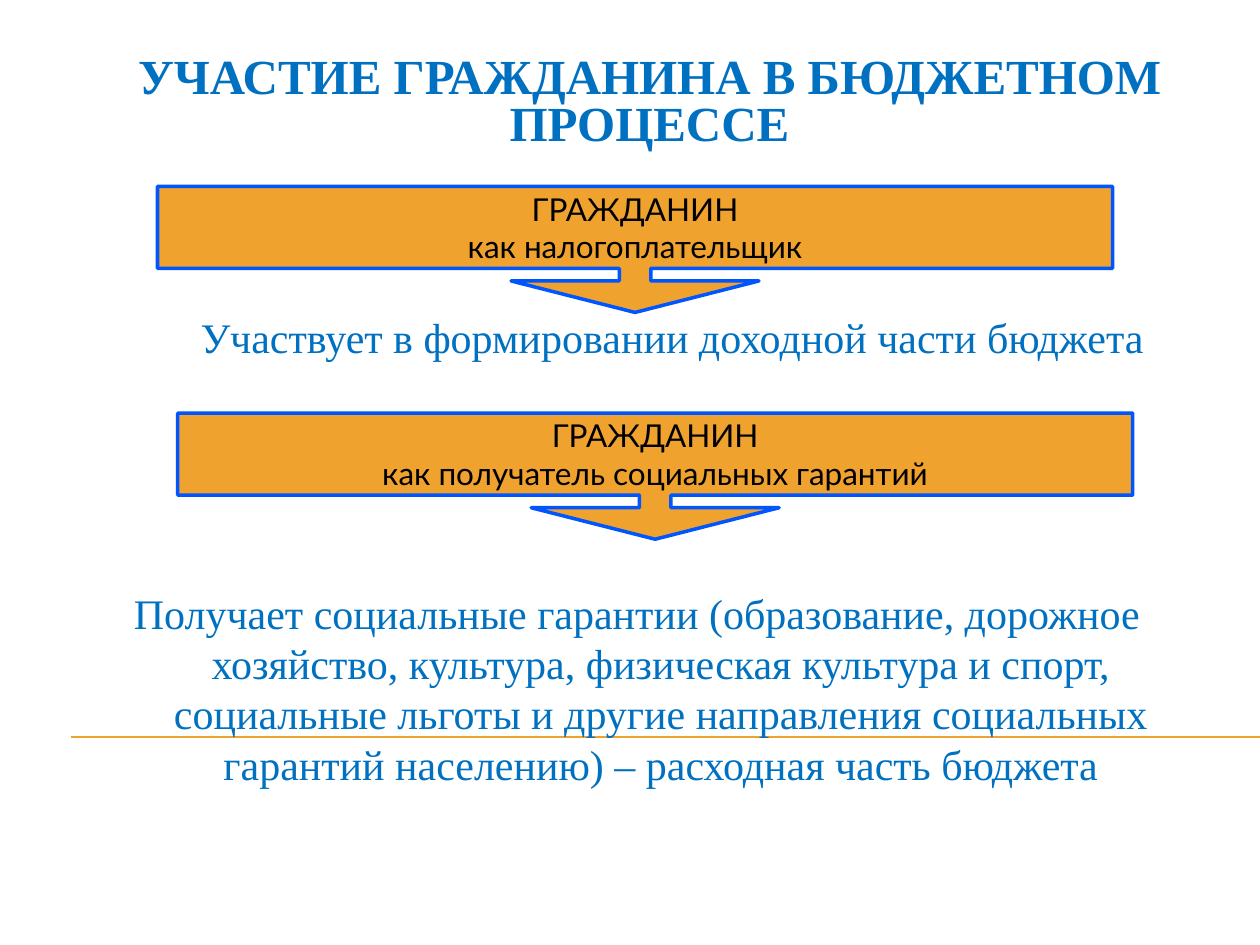
from pptx import Presentation
from pptx.dml.color import RGBColor
from pptx.enum.shapes import MSO_CONNECTOR as Connector, MSO_SHAPE as Shape
from pptx.enum.text import MSO_ANCHOR as Anchor, PP_ALIGN as Align
from pptx.oxml.ns import qn
from pptx.util import Inches, Pt
from lxml.etree import SubElement

COLORS = {"orange": "F0A22E", "outline": "0055FE", "blue": "0070C0", "black": "000000"}


def rgb(name):
    return RGBColor.from_string(COLORS[name])


def write(frame, text, size=24, font="Times New Roman", color="blue", bold=False,
          anchor=Anchor.TOP, spacing=None, hanging=0):
    frame.word_wrap = True
    frame.vertical_anchor = anchor
    for index, line in enumerate(text.split("\n")):
        paragraph = frame.add_paragraph() if index else frame.paragraphs[0]
        paragraph.alignment = Align.CENTER
        if spacing:
            paragraph.line_spacing = spacing
        if hanging:
            properties = paragraph._p.get_or_add_pPr()
            properties.set("marL", str(Inches(hanging)))
            properties.set("indent", str(-Inches(hanging)))
        run = paragraph.add_run()
        run.text = line
        run.font.name = font
        run.font.size = Pt(size)
        run.font.bold = bold
        run.font.color.rgb = rgb(color)


class BudgetSlide:
    """Draws the elements of the slide in one shared style."""

    def __init__(self, slide):
        self.shapes = slide.shapes

    def rule(self, left, right, y):
        rule = self.shapes.add_connector(
            Connector.STRAIGHT, Inches(left), Inches(y), Inches(right), Inches(y))
        rule.line.color.rgb = rgb("orange")
        rule.line.width = Pt(0.75)
        SubElement(rule._element.spPr, qn("a:effectLst"))

    def text(self, left, top, width, height, content, **style):
        box = self.shapes.add_textbox(Inches(left), Inches(top), Inches(width), Inches(height))
        write(box.text_frame, content, **style)

    def callout(self, left, top, content):
        callout = self.shapes.add_shape(
            Shape.DOWN_ARROW_CALLOUT, Inches(left), Inches(top), Inches(7.58), Inches(1))
        for index, value in enumerate((0.25, 0.984, 0.25, 0.65)):
            callout.adjustments[index] = value
        callout.shadow.inherit = False
        callout.fill.solid()
        callout.fill.fore_color.rgb = rgb("orange")
        callout.line.color.rgb = rgb("outline")
        callout.line.width = Pt(2)
        write(callout.text_frame, content, size=18, font="Lato", color="black",
              anchor=Anchor.MIDDLE)


def main():
    deck = Presentation()
    deck.slide_width, deck.slide_height = Inches(10), Inches(7.5)
    budget = BudgetSlide(deck.slides.add_slide(deck.slide_layouts[6]))

    budget.rule(0.56, 10, 5.85)
    budget.text(0.31, 0.23, 9.69, 1.02, "УЧАСТИЕ ГРАЖДАНИНА В БЮДЖЕТНОМ ПРОЦЕССЕ",
                size=28, bold=True, anchor=Anchor.BOTTOM, spacing=0.8)
    budget.callout(1.25, 1.48, "ГРАЖДАНИН\nкак налогоплательщик")
    budget.text(1.02, 2.42, 8.63, 0.78,
                "Участвует в формировании доходной части бюджета", hanging=0.38)
    budget.callout(1.41, 3.28, "ГРАЖДАНИН\nкак получатель социальных гарантий")
    budget.text(0.39, 4.61, 9.33, 1.02,
                "Получает социальные гарантии (образование, дорожное хозяйство, культура, "
                "физическая культура и спорт, социальные льготы и другие направления "
                "социальных гарантий населению) – расходная часть бюджета", hanging=0.38)
    deck.save("out.pptx")


if __name__ == "__main__":
    main()
